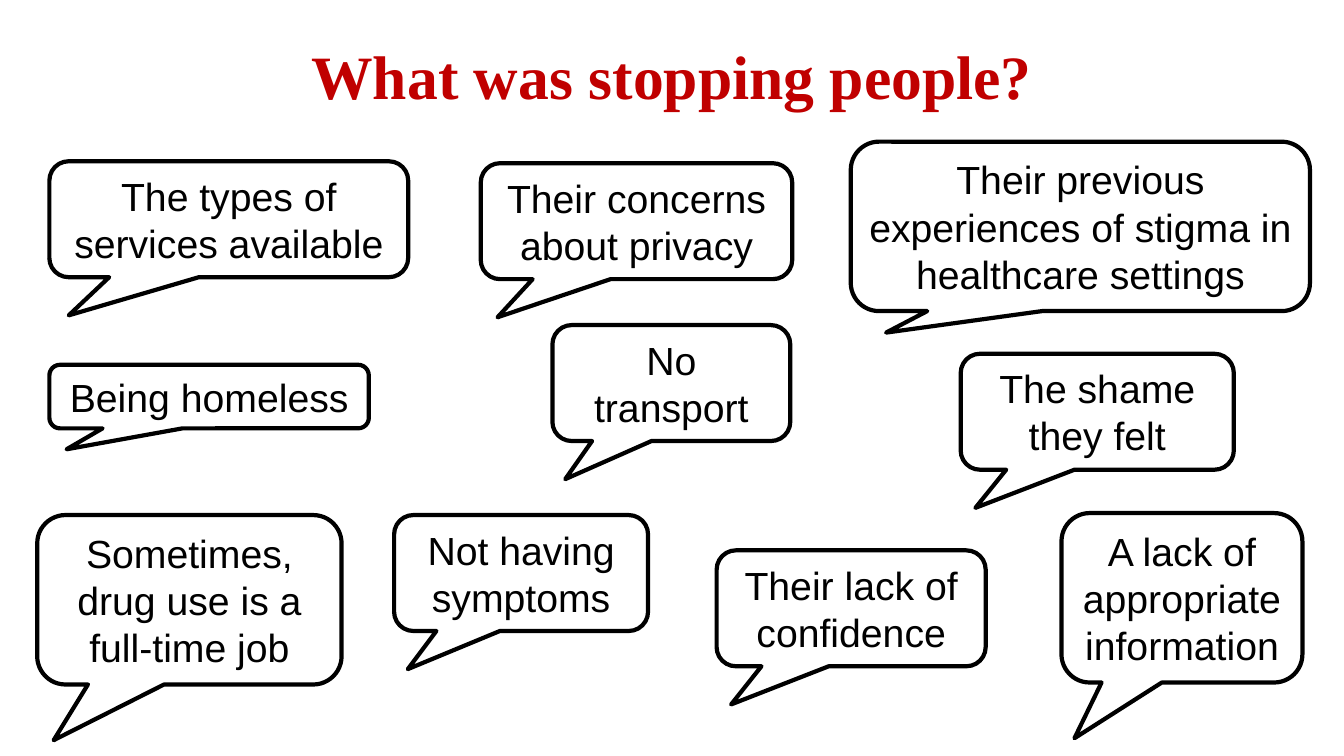
"""Build a slide of speech bubbles showing what was stopping people."""
from pptx import Presentation
from pptx.dml.color import RGBColor
from pptx.enum.shapes import MSO_SHAPE
from pptx.enum.text import MSO_ANCHOR, MSO_AUTO_SIZE, PP_ALIGN
from pptx.util import Pt

CALLOUT = MSO_SHAPE.ROUNDED_RECTANGULAR_CALLOUT
CENTER = PP_ALIGN.CENTER
MIDDLE = MSO_ANCHOR.MIDDLE
GROW = MSO_AUTO_SIZE.SHAPE_TO_FIT_TEXT
TITLE_ONLY = 5
BLACK, WHITE, RED = "000000", "FFFFFF", "C00000"
LINE_HEIGHTS = {1: 45.4, 2: 82.8, 3: 121}
TAIL, STIGMA_TAIL = (-0.446, 0.829), (-0.423, 0.627)


def rgb(color):
    return RGBColor.from_string(color)


def set_text(s, text, size, font, color, bold):
    tf = s.text_frame
    tf.text = text
    tf.word_wrap = True
    tf.auto_size = GROW
    tf.vertical_anchor = MIDDLE
    p = tf.paragraphs[0]
    p.alignment = CENTER
    r = p.runs[0]
    r.font.size = Pt(size)
    r.font.name = font
    r.font.bold = bold
    r.font.color.rgb = rgb(color)


prs = Presentation()
prs.slide_width, prs.slide_height = Pt(960), Pt(540)
slide = prs.slides.add_slide(prs.slide_layouts[TITLE_ONLY])

title = slide.shapes.title
title.left, title.top, title.width, title.height = Pt(0), Pt(23), Pt(960), Pt(60.5)
set_text(title, "What was stopping people?", 44, "Times New Roman", RED, True)

bubbles = [
    ("The types of services available", 35.3, 115.2, 256.3, 2, TAIL),
    ("Being homeless", 35.3, 260.6, 228.2, 1, TAIL),
    ("Sometimes, drug use is a full-time job", 26.6, 367.9, 217.4, 3, TAIL),
    ("Their concerns about privacy", 343.4, 116.6, 222.5, 2, TAIL),
    ("Their previous experiences of stigma in healthcare settings",
     607.7, 101.2, 328, 3, STIGMA_TAIL),
    ("No transport", 394.6, 232.2, 169.9, 2, TAIL),
    ("Not having symptoms", 281.5, 367.9, 181.4, 2, TAIL),
    ("The shame they felt", 686.2, 252.7, 195.1, 2, TAIL),
    ("A lack of appropriate information", 758.2, 366.5, 172.1, 3, TAIL),
    ("Their lack of confidence", 511.9, 393.1, 192.2, 2, TAIL),
]
for text, left, top, width, lines, tail in bubbles:
    sp = slide.shapes.add_shape(CALLOUT, Pt(left), Pt(top), Pt(width),
                                Pt(LINE_HEIGHTS[lines]))
    sp.adjustments[0], sp.adjustments[1] = tail
    sp.shadow.inherit = False
    sp.fill.solid()
    sp.fill.fore_color.rgb = rgb(WHITE)
    sp.line.color.rgb = rgb(BLACK)
    sp.line.width = Pt(3)
    set_text(sp, text, 28, "Arial", BLACK, False)

prs.save("out.pptx")
